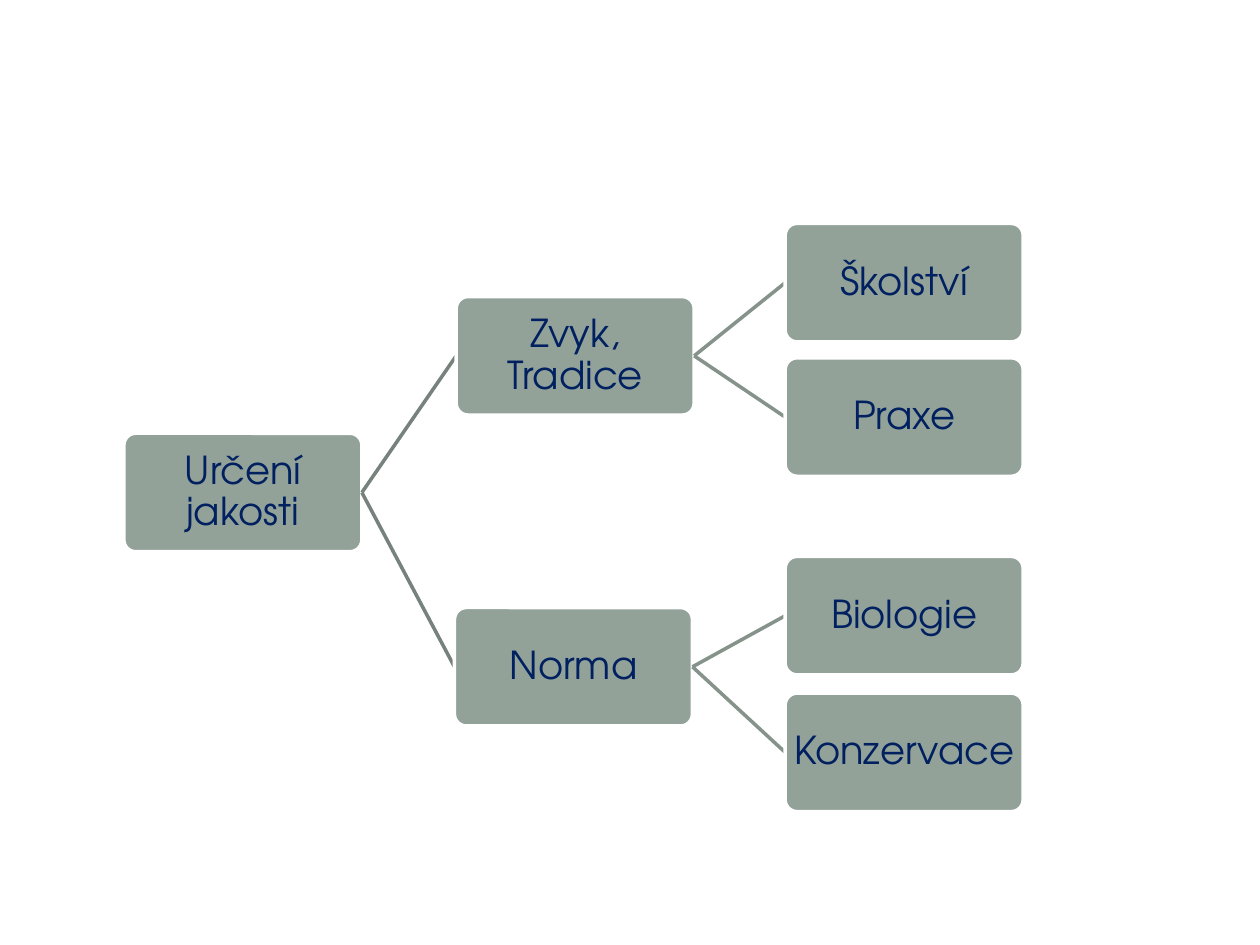
from dataclasses import dataclass, field

import pptx
import pptx.dml.color
import pptx.enum.shapes
import pptx.enum.text
import pptx.util
from lxml import etree

Pt = pptx.util.Pt
RGB = pptx.dml.color.RGBColor.from_string


@dataclass(frozen=True)
class Theme:
    font: str = "TeX Gyre Adventor"
    size: float = 22
    text: str = "002060"
    box: str = "93A299"
    border: str = "FFFFFF"
    branches: tuple = ("76827B", "85938B")  # by depth of the parent
    line_width: float = 2


@dataclass(frozen=True)
class Topic:
    label: str
    left: float
    top: float
    children: list = field(default_factory=list)


THEME = Theme()
BOX_WIDTH, BOX_HEIGHT = 136, 67.7
LEAF_LEFT = 448.7

QUALITY = Topic("Určení jakosti", 70.8, 247.6, [
    Topic("Zvyk, Tradice", 260.7, 169.5, [
        Topic("Školství", LEAF_LEFT, 127.7),
        Topic("Praxe", LEAF_LEFT, 204.5),
    ]),
    Topic("Norma", 259.7, 347.2, [
        Topic("Biologie", LEAF_LEFT, 318),
        Topic("Konzervace", LEAF_LEFT, 396.1),
    ]),
])


def add_box(slide, topic):
    box = slide.shapes.add_shape(
        pptx.enum.shapes.MSO_SHAPE.ROUNDED_RECTANGLE,
        Pt(topic.left), Pt(topic.top), Pt(BOX_WIDTH), Pt(BOX_HEIGHT))
    box.adjustments[0] = 0.1
    box.shadow.inherit = False
    box.fill.solid()
    box.fill.fore_color.rgb = RGB(THEME.box)
    box.line.color.rgb = RGB(THEME.border)
    box.line.width = Pt(THEME.line_width)

    frame = box.text_frame
    frame.word_wrap = True
    frame.vertical_anchor = pptx.enum.text.MSO_ANCHOR.MIDDLE
    frame.margin_left = frame.margin_right = Pt(2)
    frame.margin_top = frame.margin_bottom = Pt(2)
    frame.text = topic.label
    paragraph = frame.paragraphs[0]
    paragraph.alignment = pptx.enum.text.PP_ALIGN.CENTER
    paragraph.line_spacing = 0.9
    paragraph.font.name = THEME.font
    paragraph.font.size = Pt(THEME.size)
    paragraph.font.color.rgb = RGB(THEME.text)


def add_branch(slide, parent, child, color):
    """Join the parent's right edge to the child's left edge, at mid-height."""
    branch = slide.shapes.add_connector(
        pptx.enum.shapes.MSO_CONNECTOR.STRAIGHT,
        Pt(parent.left + BOX_WIDTH), Pt(parent.top + BOX_HEIGHT / 2),
        Pt(child.left), Pt(child.top + BOX_HEIGHT / 2))
    branch.line.color.rgb = RGB(color)
    branch.line.width = Pt(THEME.line_width)
    properties = branch._element.spPr
    etree.SubElement(properties, pptx.oxml.ns.qn("a:effectLst"))


def add_tree(slide, topic, depth=0):
    """Draw a topic, then each branch beneath the child it leads to."""
    add_box(slide, topic)
    for child in topic.children:
        add_branch(slide, topic, child, THEME.branches[depth])
        add_tree(slide, child, depth + 1)


def main():
    presentation = pptx.Presentation()
    presentation.slide_width = Pt(720)
    presentation.slide_height = Pt(540)
    blank_layout = presentation.slide_layouts[6]
    slide = presentation.slides.add_slide(blank_layout)
    add_tree(slide, QUALITY)
    presentation.save("out.pptx")


if __name__ == "__main__":
    main()
